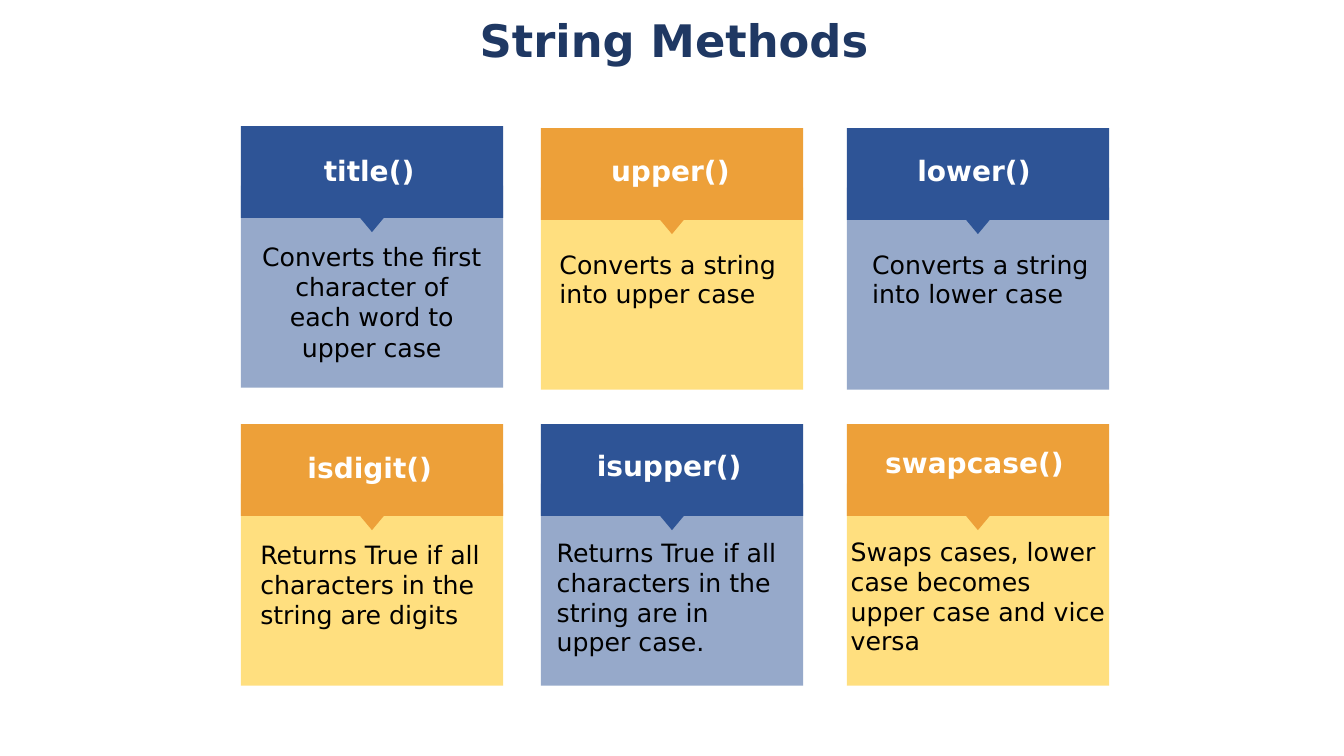
"""Build the String Methods slide with six captioned cards."""
from dataclasses import dataclass
from typing import Union

from lxml import etree
from pptx import Presentation
from pptx import util as u
from pptx.dml.color import RGBColor
from pptx.enum import shapes, text
from pptx.oxml.ns import qn

COLORS = {"title": "1F3863", "blue": "2E5496", "orange": "EDA039",
          "amber": "FFC000", "white": "FFFFFF", "black": "000000"}
BODY_COLORS = {"blue": "blue", "orange": "amber"}
FONT = "DejaVu Sans"
COLUMNS = (6.07, 13.63, 21.34)
CARD_W, BODY_TOP, BODY_H = 6.61, 1.5, 5.09
HEAD_H, TIP_H, TIP_HALF = 2.31, 2.67, 0.3


@dataclass
class Label:
    text: str
    x: float
    y: float
    w: float
    h: float = 0.89
    size: int = 20
    color: str = "white"
    bold: bool = True
    before: float = 1.0
    inset_left: float = 0.03
    inset_top: float = 0.03
    spacing: Union[float, u.Length] = 1.0
    align: text.PP_ALIGN = text.PP_ALIGN.LEFT


@dataclass
class Card:
    column: int
    y: float
    color: str
    head: Label
    body: Label


def body_label(words: str, x: float, y: float, w: float, h: float, **style) -> Label:
    return Label(words, x, y, w, h, size=18, color="black", bold=False, **style)


TWO_LINES = dict(before=2.4, inset_top=0.08, spacing=u.Pt(20.8))
LONG = dict(before=1.3, inset_top=0.05, spacing=0.98)

CARDS = [
    Card(0, 3.18, "blue", Label("title()", 8.13, 3.84, 2.44),
         body_label("Converts the first character of each word to upper case",
                    6.55, 6.05, 5.61, 3.07, align=text.PP_ALIGN.CENTER)),
    Card(1, 3.23, "orange", Label("upper()", 15.37, 3.84, 3.15),
         body_label("Converts a string into upper case", 14.07, 6.22, 5.54, 1.55, **TWO_LINES)),
    Card(2, 3.23, "blue", Label("lower()", 23.09, 3.84, 3.07),
         body_label("Converts a string into lower case", 21.95, 6.22, 5.54, 1.55, **TWO_LINES)),
    Card(0, 10.69, "orange", Label("isdigit()", 7.72, 11.33, 3.3),
         body_label("Returns True if all characters in the string are digits",
                    6.53, 13.59, 5.72, 2.29, **LONG)),
    Card(1, 10.69, "blue", Label("isupper()", 15.01, 11.28, 3.81),
         body_label("Returns True if all characters in the string are in upper case.",
                    14.0, 13.54, 5.72, 3.02, **LONG)),
    Card(2, 10.69, "orange", Label("swapcase()", 22.28, 11.2, 4.7),
         body_label("Swaps cases, lower case becomes upper case and vice versa",
                    21.41, 13.51, 6.45, 3.02, **LONG)),
]
TITLE = Label("String Methods", 3.0, 0.28, 27.89, 3.23, size=32, color="title", inset_left=9.09)


def paint(sp, color: str) -> None:
    sp.shadow.inherit = False
    sp.line.fill.background()
    sp.fill.solid()
    sp.fill.fore_color.rgb = RGBColor.from_string(COLORS[color])


def draw_card(s, card: Card) -> None:
    group = s.shapes.add_group_shape()
    left, top = COLUMNS[card.column], card.y
    right, middle, base = left + CARD_W, left + CARD_W / 2, top + HEAD_H

    body = group.shapes.add_shape(shapes.MSO_SHAPE.RECTANGLE, u.Cm(left), u.Cm(top + BODY_TOP),
                                  u.Cm(CARD_W), u.Cm(BODY_H))
    paint(body, BODY_COLORS[card.color])
    color = body.fill._xPr.find(qn("a:solidFill"))[0]
    etree.SubElement(color, qn("a:alpha"), val="50000")

    outline = [(left, top), (left, base), (middle - TIP_HALF, base), (middle, top + TIP_H),
               (middle + TIP_HALF, base), (right, base)]
    builder = group.shapes.build_freeform(u.Cm(right), u.Cm(top))
    builder.add_line_segments([(u.Cm(x), u.Cm(y)) for x, y in outline])
    paint(builder.convert_to_shape(), card.color)


def draw_label(s, label: Label) -> None:
    sp = s.shapes.add_textbox(u.Cm(label.x), u.Cm(label.y), u.Cm(label.w), u.Cm(label.h))
    tf = sp.text_frame
    tf.word_wrap = True
    tf.margin_left, tf.margin_top = u.Cm(label.inset_left), u.Cm(label.inset_top)
    tf.margin_right = tf.margin_bottom = 0
    tf.text = label.text
    p = tf.paragraphs[0]
    p.alignment = label.align
    p.space_before = u.Pt(label.before)
    p.line_spacing = label.spacing
    r = p.runs[0]
    r.font.name, r.font.size, r.font.bold = FONT, u.Pt(label.size), label.bold
    r.font.color.rgb = RGBColor.from_string(COLORS[label.color])


def main() -> None:
    prs = Presentation()
    prs.slide_width, prs.slide_height = u.Cm(33.87), u.Cm(19.05)
    s = prs.slides.add_slide(prs.slide_layouts[6])
    draw_label(s, TITLE)
    for card in CARDS:
        draw_card(s, card)
    for card in CARDS:
        draw_label(s, card.head)
        draw_label(s, card.body)
    prs.save("out.pptx")


if __name__ == "__main__":
    main()
